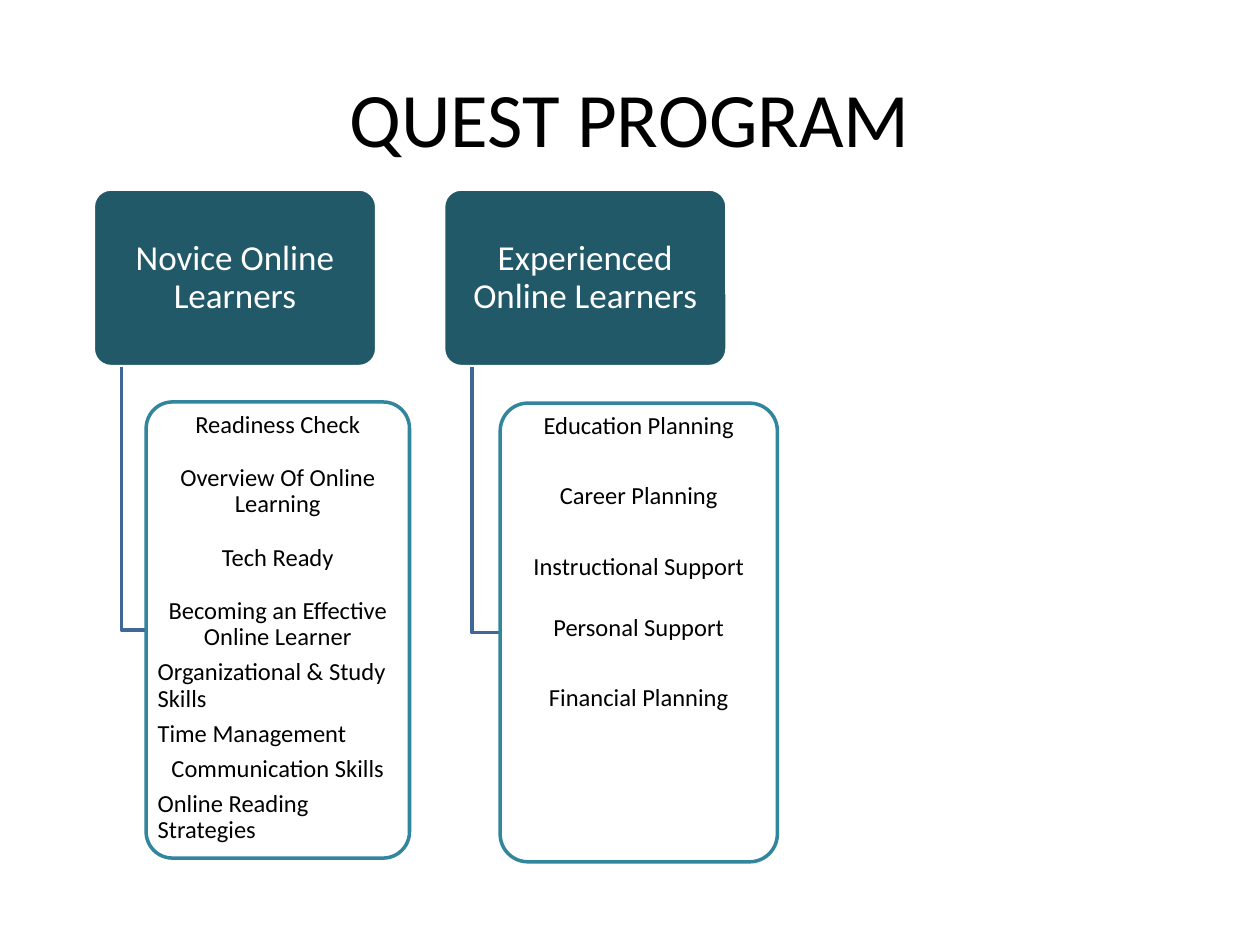
from dataclasses import dataclass

from pptx import Presentation
from pptx.dml.color import RGBColor
from pptx.enum.shapes import MSO_SHAPE
from pptx.enum.text import MSO_ANCHOR, PP_ALIGN
from pptx.util import Inches, Pt

ROUND = MSO_SHAPE.ROUNDED_RECTANGLE
MIDDLE, TOP = MSO_ANCHOR.MIDDLE, MSO_ANCHOR.TOP
CENTER, LEFT = PP_ALIGN.CENTER, PP_ALIGN.LEFT
COLORS = {"head": "215968", "edge": "31859C", "link": "3F6797",
          "white": "FFFFFF", "black": "000000"}
TIGHT, LINE, WIDE, LOOSE = 4.9, 15.2, 24.9, 20.1


@dataclass
class Item:
    text: str
    after: float = TIGHT
    align: PP_ALIGN = CENTER


@dataclass
class Box:
    left: float
    top: float
    width: float
    height: float


@dataclass
class Style:
    fill: str
    line: str
    ink: str
    size: int
    anchor: MSO_ANCHOR
    pad: tuple[float, float]


@dataclass
class Track:
    title: str
    head: Box
    card: Box
    items: list[Item]


HEAD = Style("head", "white", "white", 20, MIDDLE, (0.04, 0.03))
CARD = Style("white", "edge", "black", 14, TOP, (0.03, 0.02))

TRACKS = [
    Track("Novice Online Learners", Box(0.74, 1.5, 2.25, 1.41),
          Box(1.16, 3.19, 2.09, 3.62), [
              Item("Readiness Check", LINE),
              Item("Overview Of Online Learning", LINE),
              Item("Tech Ready", LINE),
              Item("Becoming an Effective Online Learner"),
              Item("Organizational & Study Skills", align=LEFT),
              Item("Time Management", align=LEFT),
              Item("Communication Skills"),
              Item("Online Reading Strategies", align=LEFT)]),
    Track("Experienced Online Learners", Box(3.52, 1.5, 2.25, 1.41),
          Box(3.97, 3.2, 2.2, 3.64), [
              Item("Education Planning", WIDE),
              Item("Career Planning", WIDE),
              Item("Instructional Support", LOOSE),
              Item("Personal Support", WIDE),
              Item("Financial Planning")]),
]


def color(name: str) -> RGBColor:
    return RGBColor.from_string(COLORS[name])


def apply(target, values: dict) -> None:
    for name, value in values.items():
        setattr(target, name, value)


def ink(para, size: int, name: str) -> None:
    apply(para.font, {"name": "Calibri", "size": Pt(size)})
    para.font.color.rgb = color(name)


def stroke(shape, name: str) -> None:
    shape.line.color.rgb = color(name)
    shape.line.width = Pt(2)
    shape.shadow.inherit = False


def draw_box(slide, box: Box, style: Style, items: list[Item]) -> None:
    shape = slide.shapes.add_shape(
        ROUND, Inches(box.left), Inches(box.top),
        Inches(box.width), Inches(box.height))
    shape.adjustments[0] = 0.1
    shape.fill.solid()
    shape.fill.fore_color.rgb = color(style.fill)
    stroke(shape, style.line)
    side, edge = map(Inches, style.pad)
    frame = shape.text_frame
    apply(frame, {"word_wrap": True, "vertical_anchor": style.anchor,
                  "margin_left": side, "margin_right": side,
                  "margin_top": edge, "margin_bottom": edge})
    for i, item in enumerate(items):
        para = frame.add_paragraph() if i else frame.paragraphs[0]
        apply(para, {"text": item.text, "alignment": item.align,
                     "line_spacing": 0.9, "space_after": Pt(item.after)})
        ink(para, style.size, style.ink)


def draw_link(slide, head: Box, card: Box) -> None:
    left = Inches(head.left + head.width / 10)
    top = Inches(head.top + head.height)
    low = Inches(card.top + card.height / 2)
    path = slide.shapes.build_freeform(left, top)
    path.add_line_segments([(left, low), (Inches(card.left), low)], close=False)
    shape = path.convert_to_shape()
    shape.fill.background()
    stroke(shape, "link")


def draw_title(slide, text: str) -> None:
    title = slide.shapes.title
    apply(title, {"left": Inches(0.5), "top": Inches(0.3),
                  "width": Inches(9), "height": Inches(1.25)})
    title.text_frame.vertical_anchor = MIDDLE
    para = title.text_frame.paragraphs[0]
    apply(para, {"text": text, "alignment": CENTER})
    ink(para, 44, "black")


def main() -> None:
    deck = Presentation()
    apply(deck, {"slide_width": Inches(10), "slide_height": Inches(7.5)})
    slide = deck.slides.add_slide(deck.slide_layouts[5])
    draw_title(slide, "QUEST PROGRAM")
    for track in TRACKS:
        draw_box(slide, track.head, HEAD, [Item(track.title, 0)])
        draw_link(slide, track.head, track.card)
        draw_box(slide, track.card, CARD, track.items)
    deck.save("out.pptx")


if __name__ == "__main__":
    main()
